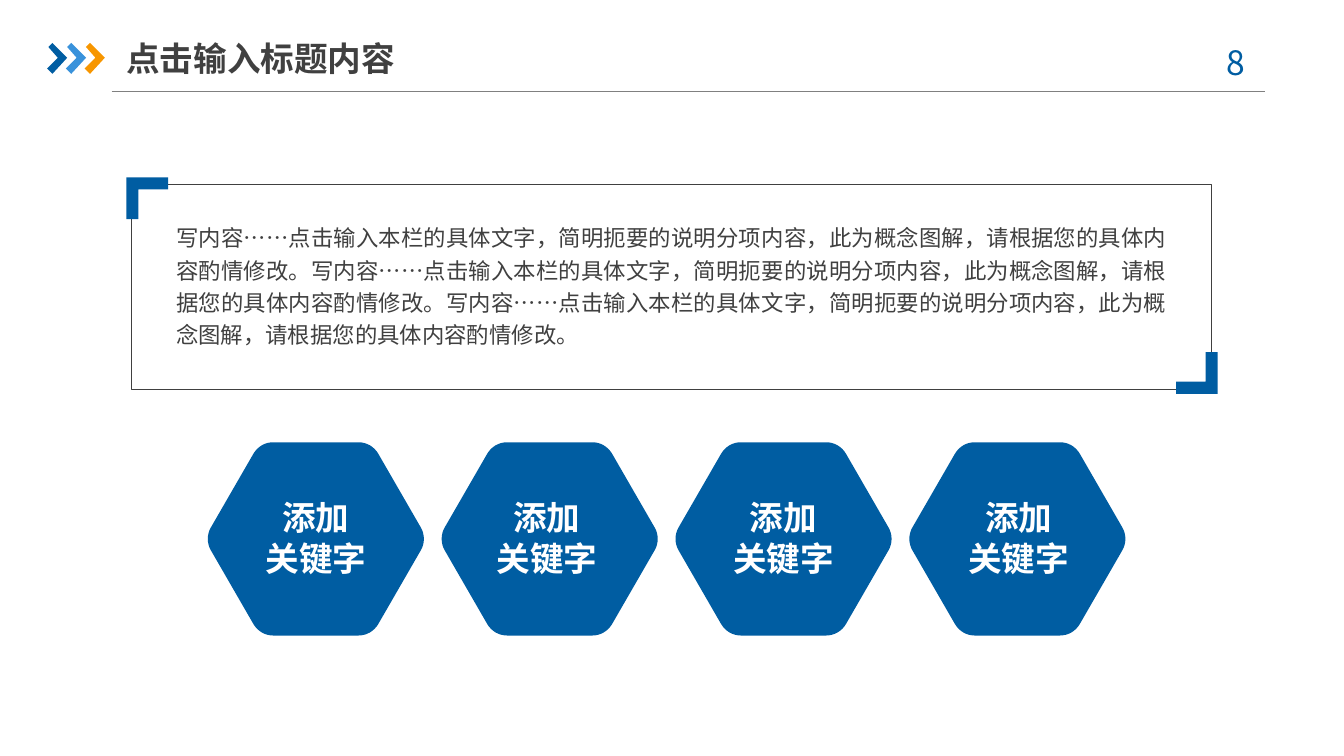
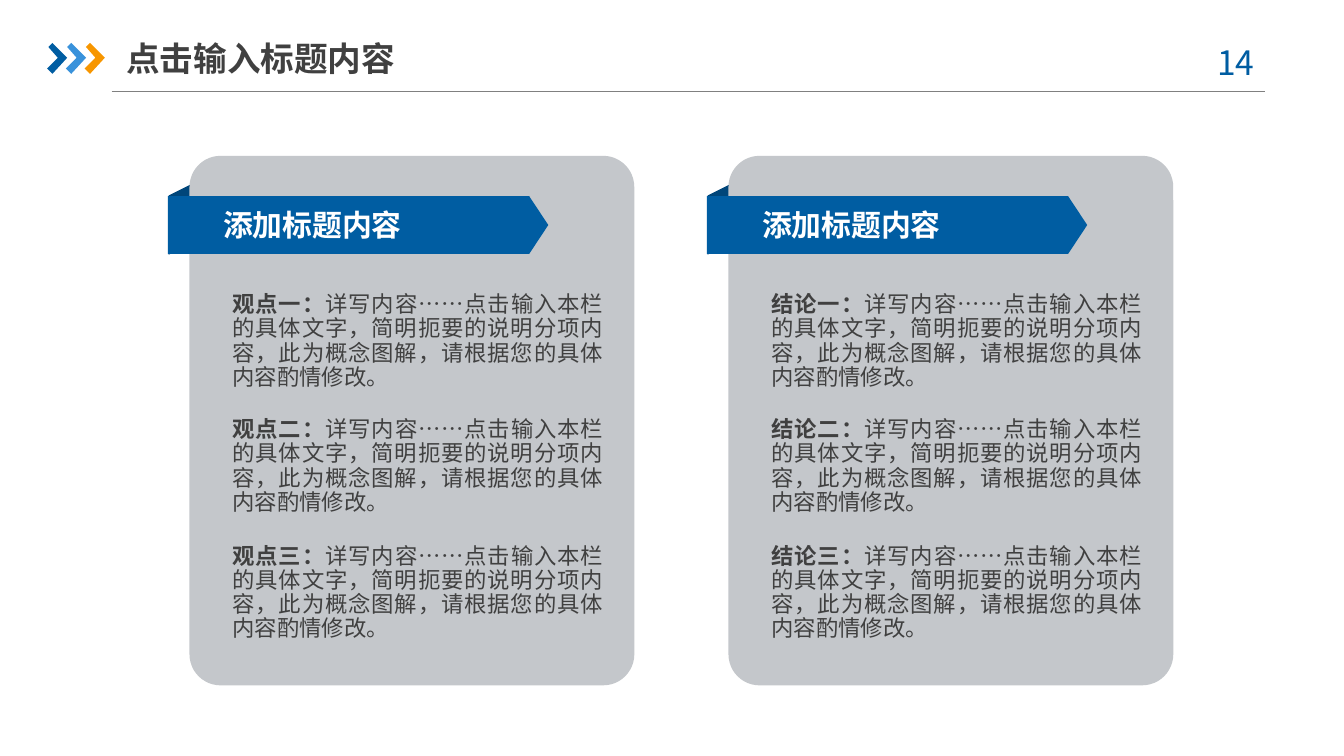
from math import cos, pi, sin

from pptx import Presentation
from pptx.dml.color import RGBColor
from pptx.enum.shapes import MSO_CONNECTOR, MSO_SHAPE
from pptx.enum.text import MSO_ANCHOR, MSO_AUTO_SIZE, PP_ALIGN
from pptx.oxml.xmlchemy import OxmlElement
from pptx.util import Inches, Pt

COLORS = {
    "blue": "005DA2",
    "light_blue": "3992DB",
    "dark_blue": "00467A",
    "orange": "F79600",
    "text": "404040",
    "rule": "808080",
    "panel": "C4C7CB",
    "white": "FFFFFF",
}
FONT = "Noto Sans CJK SC"
NO_MARGINS = {f"margin_{side}": 0 for side in ("left", "top", "right", "bottom")}
GROW = {"auto_size": MSO_AUTO_SIZE.SHAPE_TO_FIT_TEXT}

STYLES = {
    "title": {
        "color": "text",
        "font": {"size": Pt(18), "bold": True},
        "frame": {"margin_left": 0, "margin_right": 0,
                  "vertical_anchor": MSO_ANCHOR.MIDDLE},
        "paragraph": {},
    },
    "page_number": {
        "color": "blue",
        "font": {"size": Pt(18)},
        "frame": GROW,
        "paragraph": {"alignment": PP_ALIGN.CENTER},
    },
    "summary": {
        "color": "text",
        "font": {"size": Pt(12)},
        "frame": {**NO_MARGINS, **GROW},
        "paragraph": {"alignment": PP_ALIGN.JUSTIFY, "line_spacing": 1.2},
    },
    "keyword": {
        "color": "white",
        "font": {"size": Pt(18), "bold": True},
        "frame": {**NO_MARGINS, **GROW},
        "paragraph": {"alignment": PP_ALIGN.CENTER},
    },
    "banner": {
        "color": "white",
        "font": {"size": Pt(16), "bold": True},
        "frame": {**NO_MARGINS, **GROW},
        "paragraph": {},
    },
    "point": {
        "color": "text",
        "font": {"size": Pt(12)},
        "frame": {**NO_MARGINS, **GROW},
        "paragraph": {"alignment": PP_ALIGN.JUSTIFY, "line_spacing": Pt(13)},
    },
}

TITLE = "点击输入标题内容"
DETAIL = "写内容……点击输入本栏的具体文字，简明扼要的说明分项内容，此为概念图解，请根据您的具体内容酌情修改。"
KEYWORD = ["添加", "关键字"]
BANNER = "添加标题内容"

CHEVRON = [(0.01, 0.03), (0.04, 0), (0.15, 0.11), (0.04, 0.23), (0, 0.19), (0.08, 0.11)]
BRACKET = [(0, 0), (0.31, 0), (0.31, 0.09), (0.09, 0.09), (0.09, 0.31), (0, 0.31)]


def rgb(color):
    return RGBColor.from_string(COLORS[color])


def apply_format(target, values):
    for attribute, value in values.items():
        setattr(target, attribute, value)


def paint(shape, fill=None, line=None, width=0.25):
    shape.shadow.inherit = False
    if fill:
        shape.fill.solid()
        shape.fill.fore_color.rgb = rgb(fill)
    else:
        shape.fill.background()
    if line:
        shape.line.color.rgb = rgb(line)
        shape.line.width = Pt(width)
    else:
        shape.line.fill.background()
    return shape


def add_preset(slide, preset, box, fill=None, line=None, adjustment=None):
    shape = slide.shapes.add_shape(preset, *map(Inches, box))
    if adjustment is not None:
        shape.adjustments[0] = adjustment
    return paint(shape, fill, line)


def add_outline(shapes, points, left, top, fill):
    corners = [(Inches(left + x), Inches(top + y)) for x, y in points]
    builder = shapes.build_freeform(*corners[0])
    builder.add_line_segments(corners[1:], close=True)
    return paint(builder.convert_to_shape(), fill)


def add_text(slide, box, style_name, paragraphs):
    style = STYLES[style_name]
    frame = slide.shapes.add_textbox(*map(Inches, box)).text_frame
    frame.word_wrap = True
    apply_format(frame, style["frame"])
    for index, runs in enumerate(paragraphs):
        paragraph = frame.add_paragraph() if index else frame.paragraphs[0]
        apply_format(paragraph, style["paragraph"])
        for text, overrides in runs:
            run = paragraph.add_run()
            run.text = text
            run.font.color.rgb = rgb(style["color"])
            apply_format(run.font, {"name": FONT, **style["font"], **overrides})
            east_asian = OxmlElement("a:ea")
            east_asian.set("typeface", FONT)
            run._r.get_or_add_rPr().append(east_asian)


def plain(*lines):
    return [[(line, {})] for line in lines]


def add_header(slide, page):
    rule = slide.shapes.add_connector(
        MSO_CONNECTOR.STRAIGHT, *map(Inches, (0.83, 0.68, 9.41, 0.68)))
    rule.line.color.rgb = rgb("rule")
    rule.line.width = Pt(0.75)
    rule._element.spPr.append(OxmlElement("a:effectLst"))
    chevrons = slide.shapes.add_group_shape()
    for index, color in enumerate(("blue", "light_blue", "orange")):
        add_outline(chevrons.shapes, CHEVRON, 0.35 + 0.14 * index, 0.32, color)
    add_text(slide, (8.86, 0.26, 0.73, 0.4), "page_number", plain(f"{page} "))
    add_text(slide, (0.94, 0.22, 2.33, 0.42), "title", plain(TITLE))


def rounded_hexagon(radius=0.83, fillet=0.17, steps=8):
    reach = radius - fillet / cos(pi / 6)
    points = []
    for corner in range(6):
        direction = corner * pi / 3
        for step in range(steps + 1):
            angle = direction + pi / 3 * (step / steps - 0.5)
            points.append((reach * cos(direction) + fillet * cos(angle),
                           reach * sin(direction) + fillet * sin(angle)))
    return points


def add_summary(slide):
    add_preset(slide, MSO_SHAPE.ROUNDED_RECTANGLE, (0.98, 1.37, 8.03, 1.53),
               line="text", adjustment=0)
    add_text(slide, (1.31, 1.63, 7.38, 0.95), "summary", plain(DETAIL * 3))
    add_outline(slide.shapes, BRACKET, 0.94, 1.32, "blue")
    add_outline(slide.shapes, BRACKET, 8.75, 2.62, "blue").rotation = 180


def add_keywords(slide):
    hexagon = rounded_hexagon()
    for index, label_left in enumerate((1.82, 3.54, 5.3, 7.05)):
        add_outline(slide.shapes, hexagon, 2.35 + 1.74 * index, 4.01, "blue")
        add_text(slide, (label_left, 3.7, 1.06, 0.61), "keyword", plain(*KEYWORD))


def add_panel(slide, left, topic):
    fold = add_preset(slide, MSO_SHAPE.FLOWCHART_DATA,
                      (left - 0.32, 1.51, 0.55, 0.22), "dark_blue")
    fold.rotation = 270
    fold._element.spPr.xfrm.set("flipH", "1")
    add_preset(slide, MSO_SHAPE.ROUNDED_RECTANGLE, (left, 1.16, 3.31, 3.94),
               "panel", adjustment=0.07)
    add_preset(slide, MSO_SHAPE.PENTAGON, (left - 0.16, 1.46, 2.83, 0.43),
               "blue", adjustment=0.33)
    add_text(slide, (left + 0.25, 1.54, 1.86, 0.27), "banner", plain(BANNER))
    for numeral, top in zip("一二三", (2.18, 3.11, 4.05)):
        runs = [(f"{topic}{numeral}：", {"bold": True}), (f"详{DETAIL}", {"bold": False})]
        add_text(slide, (left + 0.32, top, 2.76, 0.73), "point", [runs])


def main():
    deck = Presentation()
    deck.slide_width = Inches(10)
    deck.slide_height = deck.slide_width * 9 // 16
    blank = deck.slide_layouts[6]

    keyword_slide = deck.slides.add_slide(blank)
    add_header(keyword_slide, 8)
    add_summary(keyword_slide)
    add_keywords(keyword_slide)

    comparison_slide = deck.slides.add_slide(blank)
    add_header(comparison_slide, 14)
    for left, topic in ((1.41, "观点"), (5.42, "结论")):
        add_panel(comparison_slide, left, topic)

    deck.save("out.pptx")


if __name__ == "__main__":
    main()
